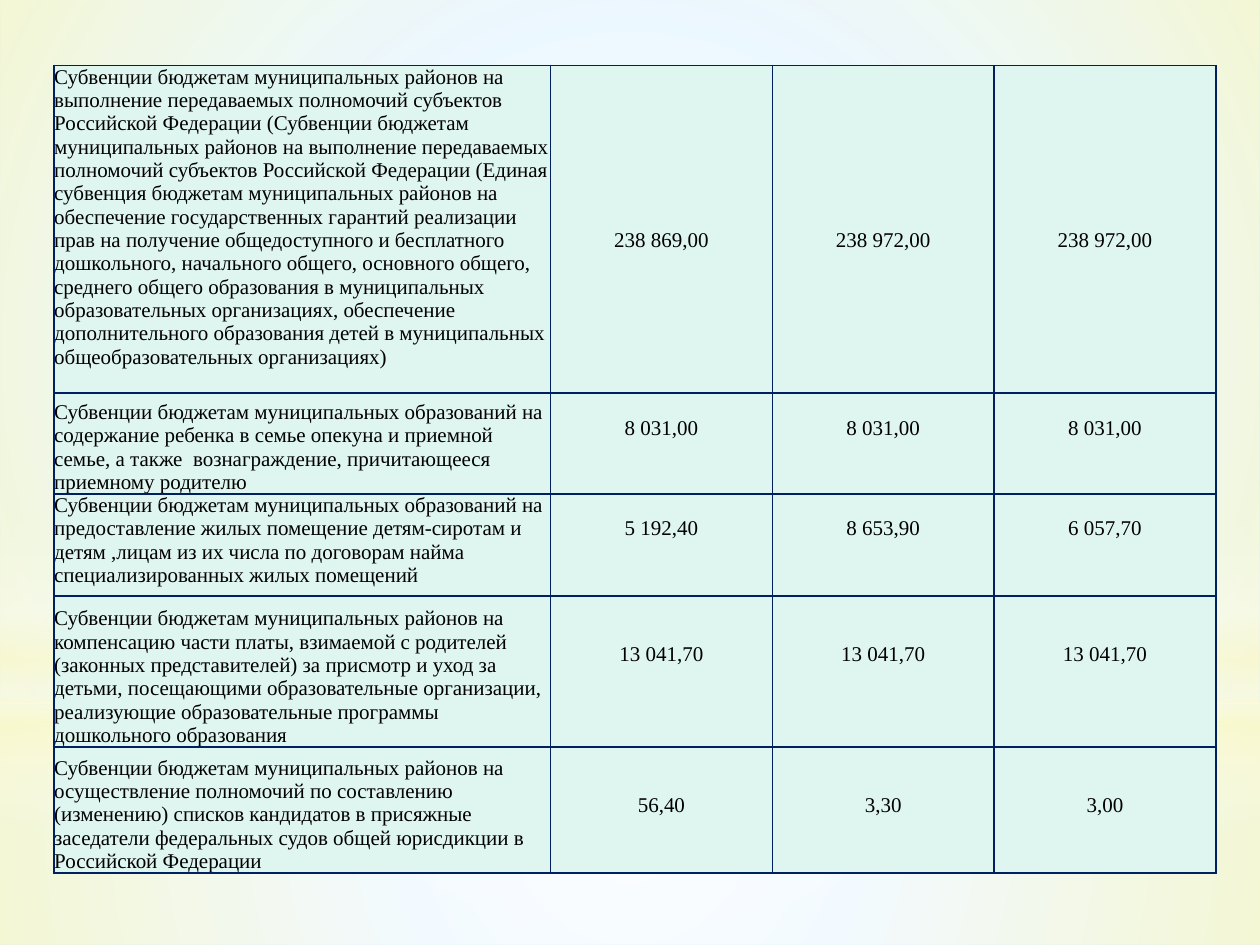
from lxml.etree import SubElement
from pptx import Presentation
from pptx.dml.color import RGBColor
from pptx.enum.shapes import MSO_SHAPE
from pptx.enum.text import MSO_ANCHOR, PP_ALIGN
from pptx.oxml import parse_xml
from pptx.oxml.ns import nsdecls, qn
from pptx.util import Inches, Pt

COLORS = {
    "sky": "CCECFF",
    "white": "FFFFFF",
    "cream": "FEFAC9",
    "mint": "DFF5EF",
    "navy": "002060",
    "text": "000000",
}
CIRCLE = ('<a:path path="circle"><a:fillToRect l="50000" t="50000" '
          'r="50000" b="50000"/></a:path>')
LINEAR = '<a:lin ang="5400000" scaled="0"/>'
LINE_HEIGHT = 0.185

BACKDROP = [
    (MSO_SHAPE.RECTANGLE, 5.58, 1.92, CIRCLE,
     [(0, "white", 91), (37, "white", 76), (100, "cream", 79)]),
    (MSO_SHAPE.RECTANGLE, 0, 5.58, CIRCLE,
     [(0, "white", 89), (48, "white", 62), (100, "cream", 79)]),
    (MSO_SHAPE.RECTANGLE, 4.12, 2.5, LINEAR,
     [(0, "white", 0), (29, "white", 30), (45, "cream", 40),
      (55, "white", 26), (65, "cream", 60), (100, "white", 0)]),
    (MSO_SHAPE.OVAL, 1.75, 5.58, CIRCLE,
     [(0, "white", 100), (56, "white", 0)]),
]

COLUMNS = [3.94, 1.76, 1.76, 1.76]
ROWS = [
    (2.6, MSO_ANCHOR.TOP, 7,
     "Субвенции бюджетам муниципальных районов на выполнение передаваемых "
     "полномочий субъектов Российской Федерации (Субвенции бюджетам "
     "муниципальных районов на выполнение передаваемых полномочий субъектов "
     "Российской Федерации (Единая субвенция бюджетам муниципальных районов на "
     "обеспечение государственных гарантий реализации прав на получение "
     "общедоступного и бесплатного дошкольного, начального общего, основного "
     "общего, среднего общего образования в муниципальных образовательных "
     "организациях, обеспечение дополнительного образования детей в "
     "муниципальных общеобразовательных организациях)",
     ["238 869,00", "238 972,00", "238 972,00"]),
    (0.8, MSO_ANCHOR.BOTTOM, 1,
     "Субвенции бюджетам муниципальных образований на содержание ребенка в "
     "семье опекуна и приемной семье, а также  вознаграждение, причитающееся "
     "приемному родителю",
     ["8 031,00", "8 031,00", "8 031,00"]),
    (0.81, MSO_ANCHOR.TOP, 1,
     "Субвенции бюджетам муниципальных образований на предоставление жилых "
     "помещение детям-сиротам и детям ,лицам из их числа по договорам найма "
     "специализированных жилых помещений",
     ["5 192,40", "8 653,90", "6 057,70"]),
    (1.2, MSO_ANCHOR.BOTTOM, 2,
     "Субвенции бюджетам муниципальных районов на компенсацию части платы, "
     "взимаемой с родителей (законных представителей) за присмотр и уход за "
     "детьми, посещающими образовательные организации, реализующие "
     "образовательные программы дошкольного образования",
     ["13 041,70", "13 041,70", "13 041,70"]),
    (1.0, MSO_ANCHOR.BOTTOM, 2,
     "Субвенции бюджетам муниципальных районов на осуществление полномочий по "
     "составлению (изменению) списков кандидатов в присяжные заседатели "
     "федеральных судов общей юрисдикции в Российской Федерации",
     ["56,40", "3,30", "3,00"]),
]


class SlideBuilder:
    font = "Times New Roman"
    size = Pt(12)

    def __init__(self, prs):
        self.s = prs.slides.add_slide(prs.slide_layouts[6])

    def background(self, color):
        fill = self.s.background.fill
        fill.solid()
        fill.fore_color.rgb = RGBColor.from_string(COLORS[color])

    def glow(self, kind, top, height, direction, stops):
        sp = self.s.shapes.add_shape(
            kind, Inches(0), Inches(top), Inches(10), Inches(height))
        sp.shadow.inherit = False
        sp.line.fill.background()
        sp.fill.background()
        stop_xml = "".join(
            f'<a:gs pos="{pos * 1000}"><a:srgbClr val="{COLORS[color]}">'
            f'<a:alpha val="{alpha * 1000}"/></a:srgbClr></a:gs>'
            for pos, color, alpha in stops)
        gradient = parse_xml(
            f'<a:gradFill {nsdecls("a")} rotWithShape="1">'
            f'<a:gsLst>{stop_xml}</a:gsLst>{direction}</a:gradFill>')
        sp_pr = sp._element.spPr
        sp_pr.replace(sp_pr.find(qn("a:noFill")), gradient)

    def borders(self, cell):
        tc_pr = cell._tc.get_or_add_tcPr()
        for side in ("lnL", "lnR", "lnT", "lnB"):
            line = SubElement(tc_pr, qn(f"a:{side}"), w=str(Pt(1)))
            fill = SubElement(line, qn("a:solidFill"))
            SubElement(fill, qn("a:srgbClr"), val=COLORS["navy"])

    def cell(self, cell, text, anchor, align, top=0):
        self.borders(cell)
        cell.fill.solid()
        cell.fill.fore_color.rgb = RGBColor.from_string(COLORS["mint"])
        cell.margin_left = cell.margin_right = cell.margin_bottom = 0
        cell.margin_top = Inches(top)
        cell.vertical_anchor = anchor
        cell.text = text
        p = cell.text_frame.paragraphs[0]
        p.alignment = align
        p.font.name = self.font
        p.font.size = self.size
        p.font.color.rgb = RGBColor.from_string(COLORS["text"])

    def table(self, left, top, columns, rows):
        table = self.s.shapes.add_table(
            len(rows), len(columns), Inches(left), Inches(top),
            Inches(sum(columns)), Inches(sum(row[0] for row in rows))).table
        table.first_row = table.horz_banding = False
        for column, width in zip(table.columns, columns):
            column.width = Inches(width)
        for i, (height, anchor, lines, label, values) in enumerate(rows):
            table.rows[i].height = Inches(height)
            self.cell(table.cell(i, 0), label, anchor, PP_ALIGN.LEFT)
            for j, value in enumerate(values, 1):
                self.cell(table.cell(i, j), value, MSO_ANCHOR.TOP,
                          PP_ALIGN.CENTER, lines * LINE_HEIGHT)


def main():
    prs = Presentation()
    prs.slide_width, prs.slide_height = Inches(10), Inches(7.5)
    builder = SlideBuilder(prs)
    builder.background("sky")
    for layer in BACKDROP:
        builder.glow(*layer)
    builder.table(0.43, 0.52, COLUMNS, ROWS)
    prs.save("out.pptx")


if __name__ == "__main__":
    main()
